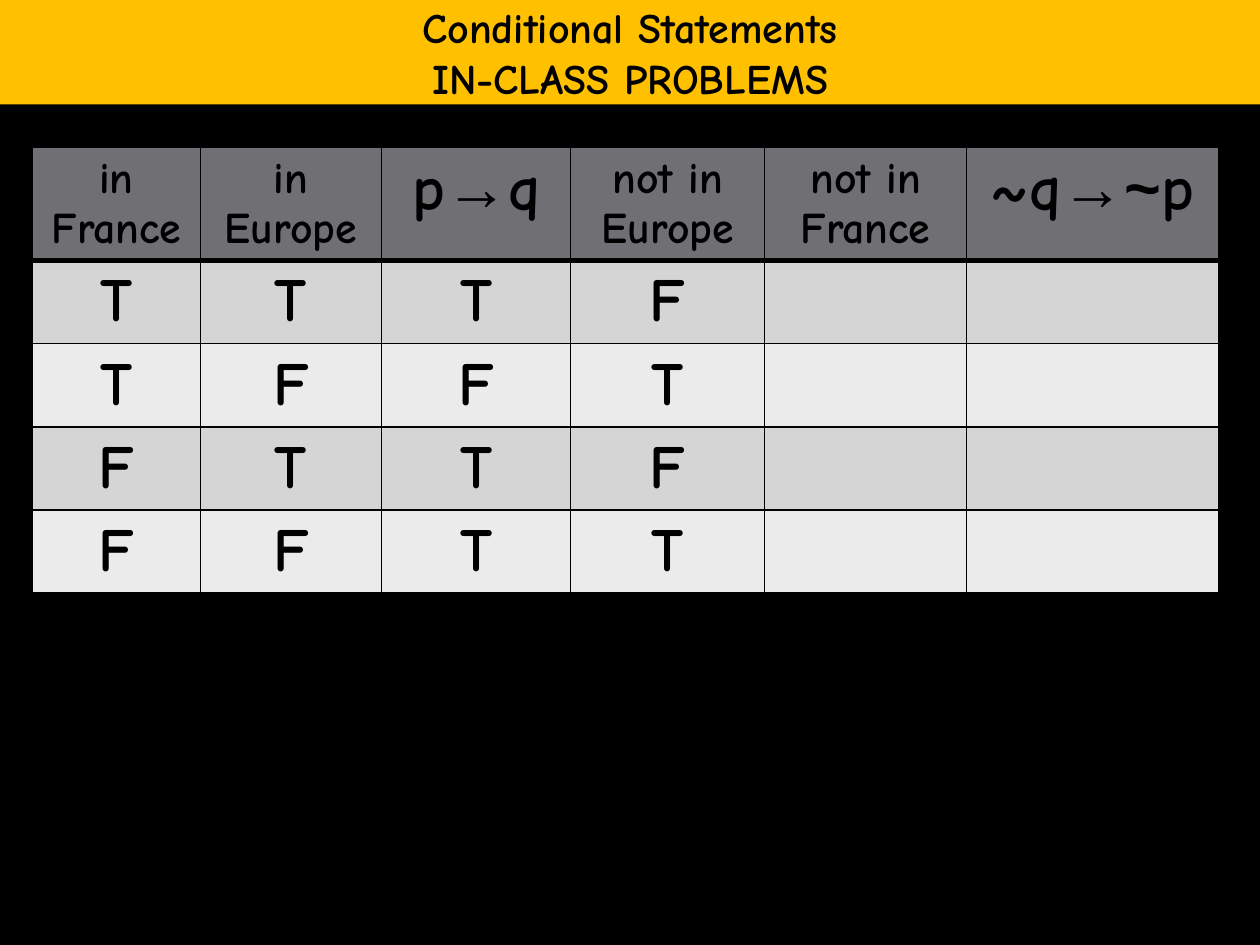
from lxml import etree
from pptx import Presentation, util as u
from pptx.dml.color import RGBColor
from pptx.enum import shapes, text
from pptx.oxml.ns import qn

# Content: each header cell is a list of (words, font key) runs
TITLE = ["Conditional Statements", "IN-CLASS PROBLEMS"]
HEADS = [
    ([("in France", "main")], "head"),
    ([("in Europe", "main")], "head"),
    ([("p", "main"), ("→", "sign"), ("q", "main")], "logic"),
    ([("not in Europe", "main")], "head"),
    ([("not in France", "main")], "head"),
    ([("~q", "main"), ("→~", "sign"), ("p", "main")], "logic"),
]
TRUTH = ["TTTF", "TFFT", "FTTF", "FFTT"]

THEME = {
    "font": {"main": "Comic Neue", "sign": "Arial"},
    "size": {"title": 24, "head": 25, "logic": 36, "value": 35},
    "ink": "000000", "back": "000000", "bar": "FFC000",
    "head": "6F6F74", "bands": ["D5D5D6", "EBEBEB"],
}
COLS = [1.33, 1.44, 1.5, 1.54, 1.6, 2]
HEAD_H, ROW_H = 0.89, 0.66
LEFT, TOP = 0.26, 1.17


def paint(fill, color):
    fill.solid()
    fill.fore_color.rgb = RGBColor.from_string(color)


def write(para, words, size, font="main"):
    para.alignment = text.PP_ALIGN.CENTER
    run = para.add_run()
    run.text = words
    run.font.name = THEME["font"][font]
    run.font.size = u.Pt(THEME["size"][size])
    run.font.bold = True
    run.font.color.rgb = RGBColor.from_string(THEME["ink"])


def edge(cell, low=1):
    """Border all four sides; low is the width of the bottom line."""
    props = cell._tc.get_or_add_tcPr()
    for spot, (side, wide) in enumerate(zip("LRTB", (1, 1, 1, low))):
        line = etree.Element(qn(f"a:ln{side}"), w=str(u.Pt(wide)))
        solid = etree.SubElement(line, qn("a:solidFill"))
        etree.SubElement(solid, qn("a:srgbClr"), val=THEME["ink"])
        props.insert(spot, line)


deck = Presentation()
deck.slide_width, deck.slide_height = u.Inches(10), u.Inches(7.5)
slide = deck.slides.add_slide(deck.slide_layouts[6])
paint(slide.background.fill, THEME["back"])

# Title bar
bar = slide.shapes.add_shape(shapes.MSO_SHAPE.RECTANGLE, 0, 0,
                             deck.slide_width, u.Inches(0.83))
bar.shadow.inherit = False
paint(bar.fill, THEME["bar"])
bar.line.fill.background()
frame = bar.text_frame
frame.word_wrap = False
frame.vertical_anchor = text.MSO_ANCHOR.MIDDLE
for i, words in enumerate(TITLE):
    para = frame.add_paragraph() if i else frame.paragraphs[0]
    write(para, words, "title")

# Truth table grid
rows = [HEAD_H] + [ROW_H] * len(TRUTH)
table = slide.shapes.add_table(
    len(rows), len(COLS), u.Inches(LEFT), u.Inches(TOP),
    u.Inches(sum(COLS)), u.Inches(sum(rows))).table
for col, wide in zip(table.columns, COLS):
    col.width = u.Inches(wide)
for row, high in zip(table.rows, rows):
    row.height = u.Inches(high)

# Header row
for c, (runs, size) in enumerate(HEADS):
    cell = table.cell(0, c)
    paint(cell.fill, THEME["head"])
    edge(cell, low=3)
    for words, font in runs:
        write(cell.text_frame.paragraphs[0], words, size, font)

# Truth values, with the last two columns left open
for r, values in enumerate(TRUTH):
    for c in range(len(COLS)):
        cell = table.cell(r + 1, c)
        paint(cell.fill, THEME["bands"][r % 2])
        edge(cell)
        if c < len(values):
            write(cell.text_frame.paragraphs[0], values[c], "value")

deck.save("out.pptx")
